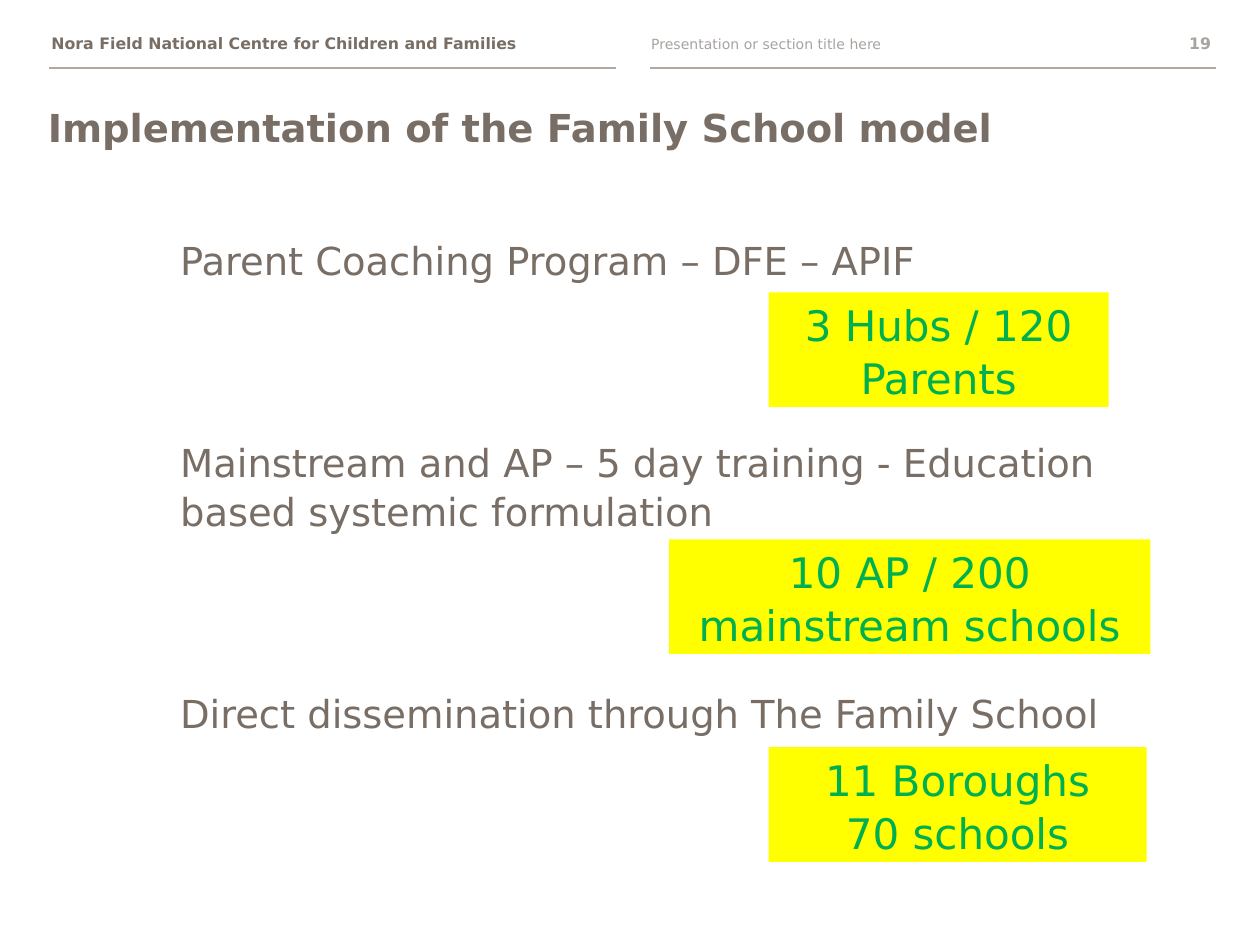
from dataclasses import dataclass
from lxml.etree import SubElement
from pptx import Presentation
from pptx.dml.color import RGBColor
from pptx.enum.shapes import MSO_CONNECTOR, MSO_SHAPE
from pptx.enum.text import MSO_ANCHOR, MSO_AUTO_SIZE, PP_ALIGN
from pptx.oxml.ns import qn
from pptx.util import Inches, Pt


@dataclass(frozen=True)
class Theme:
    font: str = "DejaVu Sans"
    brown: str = "796E65"
    grey: str = "A8A39F"
    rule: str = "B0A8A1"
    green: str = "00B050"
    yellow: str = "FFFF00"
    small: int = 8
    label: int = 9
    main: int = 22
    large: int = 24
    pitch: float = 1.05
    gap: int = 88


@dataclass(frozen=True)
class Box:
    left: float
    top: float
    width: float
    height: float


@dataclass(frozen=True)
class Style:
    size: int
    color: str
    bold: bool = False
    align: PP_ALIGN = PP_ALIGN.LEFT
    anchor: MSO_ANCHOR = MSO_ANCHOR.MIDDLE
    pitch: float = 1.0


@dataclass(frozen=True)
class Label:
    box: Box
    text: str
    style: Style


@dataclass(frozen=True)
class Tag:
    box: Box
    text: str


THEME = Theme()
TITLE = Style(THEME.main, THEME.brown, True, anchor=MSO_ANCHOR.TOP, pitch=THEME.pitch)
BODY = Style(THEME.main, THEME.brown, anchor=MSO_ANCHOR.TOP, pitch=THEME.pitch)
TAG = Style(THEME.large, THEME.green, align=PP_ALIGN.CENTER, pitch=THEME.pitch)

RULES = [(0.39, 4.89), (5.16, 9.65)]
LABELS = [
    Label(Box(0.31, 0.22, 4.48, 0.25), "Nora Field National Centre for Children and Families",
          Style(THEME.label, THEME.brown, True)),
    Label(Box(5.07, 0.22, 3.86, 0.25), "Presentation or section title here",
          Style(THEME.small, THEME.grey)),
    Label(Box(9.13, 0.22, 0.58, 0.25), "19",
          Style(THEME.label, THEME.grey, True, PP_ALIGN.RIGHT)),
]
TOPICS = [
    "Parent Coaching Program – DFE – APIF",
    "Mainstream and AP – 5 day training - Education based systemic formulation",
    "Direct dissemination through The Family School",
]
TAGS = [
    Tag(Box(6.1, 2.32, 2.7, 0.91), "3 Hubs / 120 Parents"),
    Tag(Box(5.31, 4.28, 3.82, 0.91), "10 AP / 200 mainstream schools"),
    Tag(Box(6.1, 5.93, 3, 0.91), "11 Boroughs\n70 schools"),
]


def place(box: Box) -> tuple:
    return Inches(box.left), Inches(box.top), Inches(box.width), Inches(box.height)


def write(shape, text: str, style: Style) -> None:
    frame = shape.text_frame
    frame.text = text
    frame.word_wrap = True
    frame.auto_size = MSO_AUTO_SIZE.NONE
    frame.vertical_anchor = style.anchor
    for para in frame.paragraphs:
        para.alignment = style.align
        para.line_spacing = style.pitch
        para.space_before = Pt(0)
        for run in para.runs:
            font = run.font
            font.name = THEME.font
            font.size = Pt(style.size)
            font.bold = style.bold
            font.color.rgb = RGBColor.from_string(style.color)


def fill_holder(shape, box: Box, text: str, style: Style) -> None:
    shape.left, shape.top, shape.width, shape.height = place(box)
    write(shape, text, style)


def draw_rule(slide, start: float, end: float) -> None:
    line = slide.shapes.add_connector(
        MSO_CONNECTOR.STRAIGHT, Inches(start), Inches(0.54), Inches(end), Inches(0.54))
    line.line.color.rgb = RGBColor.from_string(THEME.rule)
    line.line.width = Pt(1)
    SubElement(line._element.spPr, qn("a:effectLst"))


def draw_label(slide, label: Label) -> None:
    write(slide.shapes.add_textbox(*place(label.box)), label.text, label.style)


def draw_tag(slide, tag: Tag) -> None:
    shape = slide.shapes.add_shape(MSO_SHAPE.RECTANGLE, *place(tag.box))
    shape.shadow.inherit = False
    shape.fill.solid()
    shape.fill.fore_color.rgb = RGBColor.from_string(THEME.yellow)
    shape.line.fill.background()
    write(shape, tag.text, TAG)


def draw_body(shape) -> None:
    fill_holder(shape, Box(1.33, 1.81, 7.6, 5.37), "\n".join(TOPICS), BODY)
    for place_no, para in enumerate(shape.text_frame.paragraphs):
        para.space_before = Pt(THEME.gap if place_no else 0)
        props = para._p.get_or_add_pPr()
        props.set("marL", "0")
        props.set("indent", "0")
        SubElement(props, qn("a:buNone"))


def main() -> None:
    deck = Presentation()
    deck.slide_width, deck.slide_height = Inches(10), Inches(7.5)
    slide = deck.slides.add_slide(deck.slide_layouts[1])
    for start, end in RULES:
        draw_rule(slide, start, end)
    for label in LABELS:
        draw_label(slide, label)
    fill_holder(slide.shapes.title, Box(0.28, 0.76, 9, 0.76),
                "Implementation of the Family School model", TITLE)
    draw_body(slide.placeholders[1])
    for tag in TAGS:
        draw_tag(slide, tag)
    deck.save("out.pptx")


if __name__ == "__main__":
    main()
